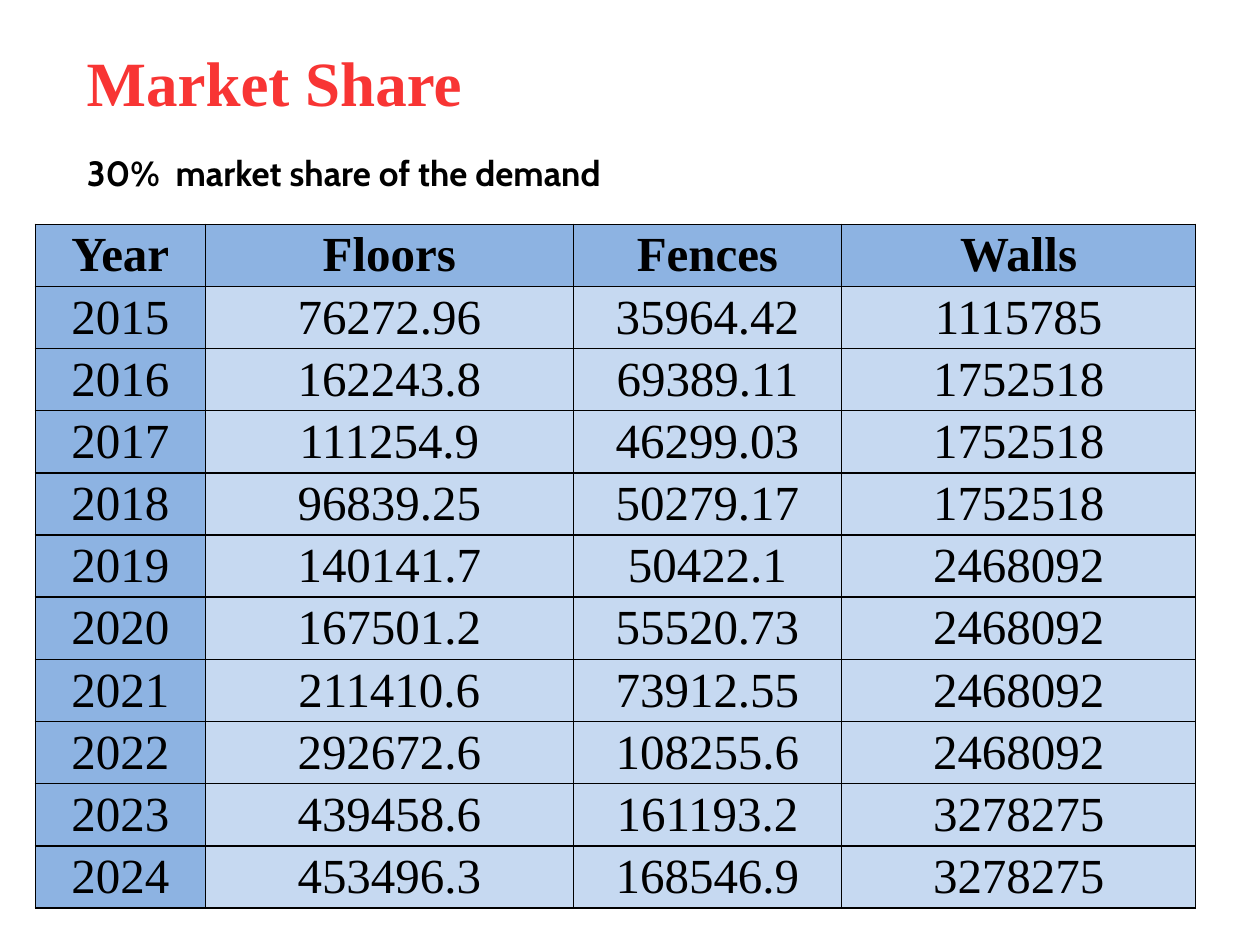
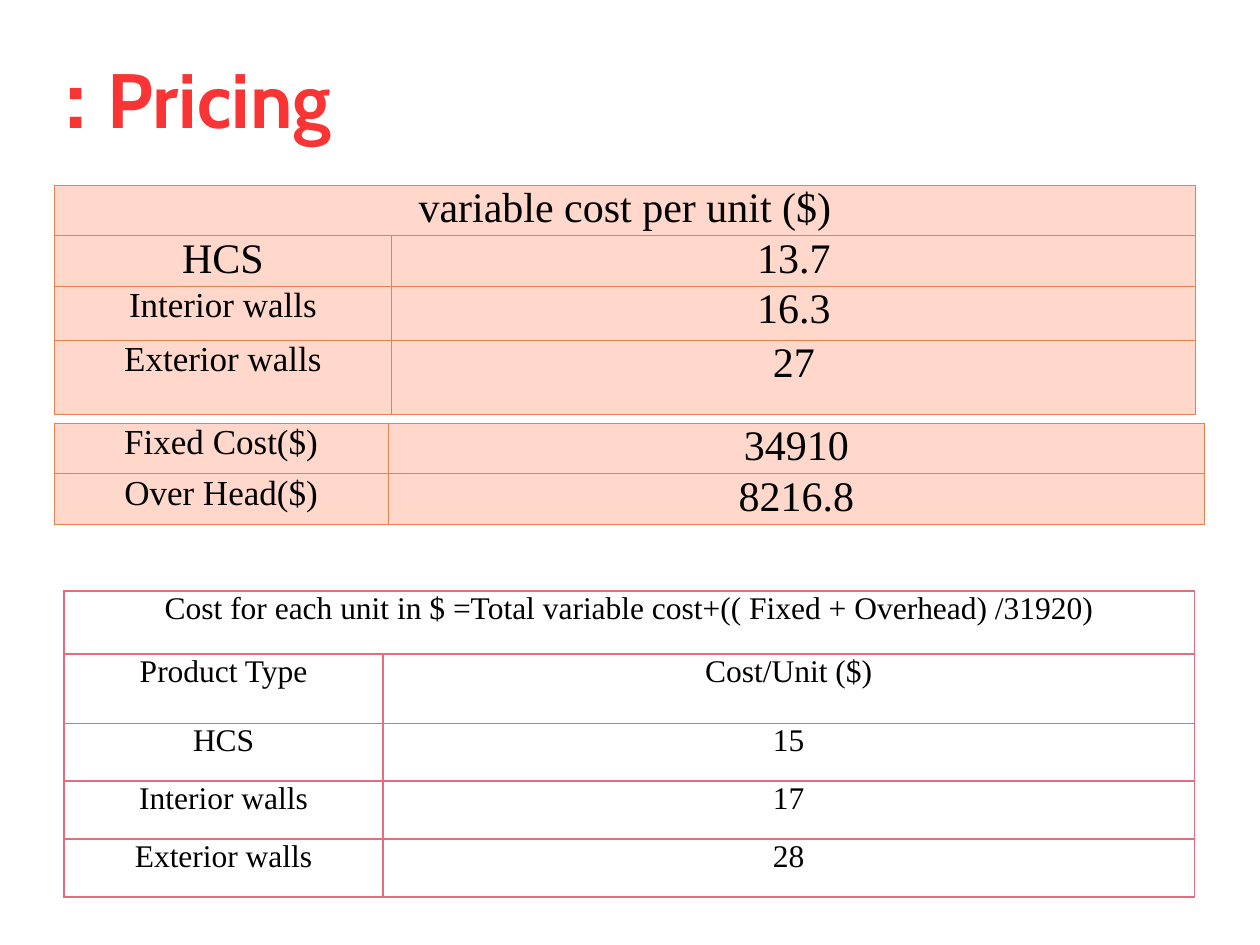
from lxml.etree import SubElement
from pptx import Presentation
from pptx.dml.color import RGBColor
from pptx.enum.text import MSO_ANCHOR, PP_ALIGN
from pptx.oxml.ns import qn
from pptx.util import Inches, Pt

SERIF, SANS = "Times New Roman", "Cabin"
RED, BLACK = "F83534", "000000"
BLUE, PALE, PEACH = "8DB3E2", "C6D9F1", "FFD7CB"
ORANGE, PINK = "E7824C", "E66C7D"

SHARE = [
    ("Year", "Floors", "Fences", "Walls"),
    ("2015", "76272.96", "35964.42", "1115785"),
    ("2016", "162243.8", "69389.11", "1752518"),
    ("2017", "111254.9", "46299.03", "1752518"),
    ("2018", "96839.25", "50279.17", "1752518"),
    ("2019", "140141.7", "50422.1", "2468092"),
    ("2020", "167501.2", "55520.73", "2468092"),
    ("2021", "211410.6", "73912.55", "2468092"),
    ("2022", "292672.6", "108255.6", "2468092"),
    ("2023", "439458.6", "161193.2", "3278275"),
    ("2024", "453496.3", "168546.9", "3278275"),
]
COSTS = [
    ("variable cost per unit ($)",),
    ("HCS", "13.7"),
    ("Interior walls", "16.3"),
    ("Exterior walls", "27"),
]
FIXED = [("Fixed Cost($)", "34910"), ("Over Head($)", "8216.8")]
UNITS = [
    ("Cost for each unit in $ =Total variable cost+(( Fixed + Overhead) /31920)",),
    ("Product Type", "Cost/Unit ($)"),
    ("HCS", "15"),
    ("Interior walls", "17"),
    ("Exterior walls", "28"),
]


def tint(code):
    return RGBColor.from_string(code)


def write(frame, text, size=18, face=SERIF, color=BLACK, bold=False,
          align=PP_ALIGN.LEFT, rtl=False):
    para = frame.paragraphs[0]
    para.alignment = align
    if rtl:
        para._p.get_or_add_pPr().set("rtl", "1")
    run = para.add_run()
    run.text = text
    font = run.font
    font.size, font.name, font.bold = Pt(size), face, bold
    font.color.rgb = tint(color)


def label(slide, text, box, anchor=MSO_ANCHOR.TOP, wrap=True, **style):
    frame = slide.shapes.add_textbox(*map(Inches, box)).text_frame
    frame.word_wrap = wrap
    frame.vertical_anchor = anchor
    write(frame, text, **style)


def title(slide, text, box, **style):
    label(slide, text, box, color=RED, bold=True, **style)


def edge(cell, color, width):
    props = cell._tc.get_or_add_tcPr()
    for side in ("lnL", "lnR", "lnT", "lnB"):
        line = SubElement(props, qn("a:" + side), w=str(Pt(width)))
        fill = SubElement(line, qn("a:solidFill"))
        SubElement(fill, qn("a:srgbClr"), val=color)


def grid(slide, data, spot, cols, rows, line, look, anchor=MSO_ANCHOR.TOP):
    box = (*spot, sum(cols), sum(rows))
    table = slide.shapes.add_table(len(rows), len(cols), *map(Inches, box)).table
    table.first_row = table.horz_banding = False
    for col, width in zip(table.columns, cols):
        col.width = Inches(width)
    for r, (row, high) in enumerate(zip(data, rows)):
        table.rows[r].height = Inches(high)
        if len(row) < len(cols):
            table.cell(r, 0).merge(table.cell(r, len(cols) - 1))
        for c in range(len(cols)):
            cell = table.cell(r, c)
            fill, style = look(r, c)
            cell.margin_left = cell.margin_right = Inches(0.07)
            cell.margin_top = cell.margin_bottom = 0
            cell.vertical_anchor = anchor
            edge(cell, *line)
            if fill:
                cell.fill.solid()
                cell.fill.fore_color.rgb = tint(fill)
            else:
                cell.fill.background()
            if c < len(row):
                write(cell.text_frame, row[c], align=PP_ALIGN.CENTER, **style)


def market(slide):
    title(slide, "Market Share", (0.59, 0.21, 3.87, 0.87), size=36,
          anchor=MSO_ANCHOR.MIDDLE)
    label(slide, "30%  market share of the demand", (0.59, 1.15, 5.05, 0.44),
          size=20, face=SANS, bold=True)

    def look(r, c):
        return PALE if r and c else BLUE, dict(size=28, bold=r == 0)

    grid(slide, SHARE, (0.28, 1.78), (1.35, 2.92, 2.13, 2.81),
         [5.43 / len(SHARE)] * len(SHARE), (BLACK, 1), look, MSO_ANCHOR.MIDDLE)


def pricing(slide):
    def costs(r, c):
        return PEACH, dict(size=24 if c or r < 2 else 20)

    def fixed(r, c):
        return PEACH, dict(size=24 if c else 20)

    def units(r, c):
        return None, dict(size=18)

    grid(slide, COSTS, (0.43, 1.47), (2.68, 6.38), (0.38, 0.38, 0.43, 0.59),
         (ORANGE, 0.5), costs)
    grid(slide, FIXED, (0.43, 3.36), (2.65, 6.48), (0.4, 0.4),
         (ORANGE, 0.5), fixed)
    grid(slide, UNITS, (0.51, 4.69), (2.53, 6.44), (0.5, 0.55, 0.46, 0.46, 0.46),
         (PINK, 1), units)
    title(slide, "Pricing :", (0.43, 0.36, 2.35, 0.84), size=44, face=SANS,
          wrap=False, rtl=True)


def main():
    deck = Presentation()
    deck.slide_width, deck.slide_height = Inches(10), Inches(7.5)
    for build in (market, pricing):
        build(deck.slides.add_slide(deck.slide_layouts[6]))
    deck.save("out.pptx")


if __name__ == "__main__":
    main()
